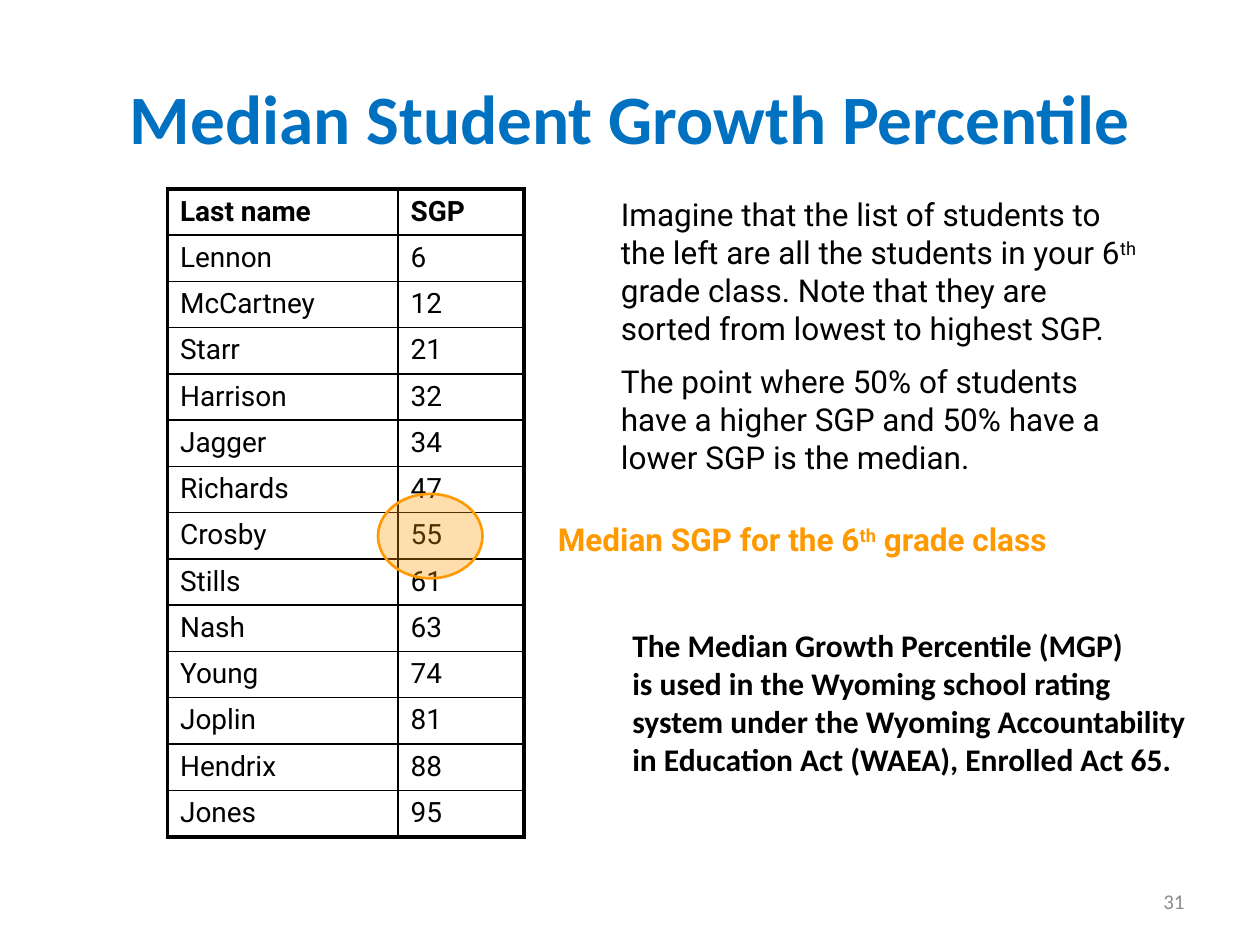
from lxml.etree import SubElement
from pptx import Presentation
from pptx.dml.color import RGBColor
from pptx.enum.shapes import MSO_SHAPE as Shape
from pptx.enum.text import MSO_ANCHOR as Anchor, PP_ALIGN as Align
from pptx.oxml.ns import qn
from pptx.util import Inches, Pt

BLACK, BLUE, ORANGE, GRAY = "000000", "0070C0", "FF9900", "8C8C8C"
THIN, THICK = 1, 2.25

STUDENTS = [
    ("Last name", "SGP"), ("Lennon", "6"), ("McCartney", "12"),
    ("Starr", "21"), ("Harrison", "32"), ("Jagger", "34"),
    ("Richards", "47"), ("Crosby", "55"), ("Stills", "61"),
    ("Nash", "63"), ("Young", "74"), ("Joplin", "81"),
    ("Hendrix", "88"), ("Jones", "95"),
]
ROW_HEIGHTS = [0.34] + [0.32] * 10 + [0.37] * 2 + [0.32]


def color(hex_code):
    return RGBColor.from_string(hex_code)


def write(frame, paragraphs, size=18, font="Roboto", ink=BLACK, bold=False,
          align=Align.LEFT, gap=0):
    """Fill a frame; text between carets, as in 6^th^, is superscript."""
    for index, text in enumerate(paragraphs):
        para = frame.add_paragraph() if index else frame.paragraphs[0]
        para.alignment = align
        if index and gap:
            para.space_before = Pt(gap)
        for number, part in enumerate(text.split("^")):
            span = para.add_run()
            span.text = part
            span.font.size = Pt(size)
            span.font.name = font
            span.font.bold = bold
            span.font.color.rgb = color(ink)
            if number % 2:
                span._r.get_or_add_rPr().set("baseline", "30000")


def draw_borders(cell, **widths):
    """Give each named side (L, R, T, B) a black line of that width."""
    properties = cell._tc.get_or_add_tcPr()
    for position, (side, width) in enumerate(widths.items()):
        line = SubElement(properties, qn(f"a:ln{side}"), w=str(Pt(width)))
        fill = SubElement(line, qn("a:solidFill"))
        SubElement(fill, qn("a:srgbClr"), val=BLACK)
        properties.insert(position, line)


class SlideBuilder:
    def __init__(self, page):
        self.page = page

    def text(self, left, top, width, height, *paragraphs, wrap=True,
             anchor=Anchor.TOP, **style):
        box = self.page.shapes.add_textbox(
            Inches(left), Inches(top), Inches(width), Inches(height))
        box.text_frame.word_wrap = wrap
        box.text_frame.vertical_anchor = anchor
        write(box.text_frame, paragraphs, **style)

    def table(self, left, top, widths, heights, rows):
        table = self.page.shapes.add_table(
            len(rows), len(widths), Inches(left), Inches(top),
            Inches(sum(widths)), Inches(sum(heights))).table
        table.first_row = table.horz_banding = False
        for column, width in zip(table.columns, widths):
            column.width = Inches(width)
        last_row, last_column = len(rows) - 1, len(widths) - 1
        for r, values in enumerate(rows):
            table.rows[r].height = Inches(heights[r])
            for c, value in enumerate(values):
                cell = table.cell(r, c)
                cell.fill.background()
                write(cell.text_frame, [value], size=16, bold=r == 0)
                draw_borders(
                    cell,
                    L=THICK if c == 0 else THIN,
                    R=THICK if c == last_column else THIN,
                    T=THICK if r == 0 else THIN,
                    B=THICK if r == last_row else THIN)

    def ellipse(self, left, top, width, height, ink, opacity):
        shape = self.page.shapes.add_shape(
            Shape.OVAL, Inches(left), Inches(top), Inches(width), Inches(height))
        shape.shadow.inherit = False
        shape.fill.solid()
        shape.fill.fore_color.rgb = color(ink)
        tint = shape._element.spPr.find(qn("a:solidFill"))[0]
        SubElement(tint, qn("a:alpha"), val=str(opacity * 1000))
        shape.line.color.rgb = color(ink)
        shape.line.width = Pt(1.5)


def main():
    deck = Presentation()
    deck.slide_width, deck.slide_height = Inches(10), Inches(7.5)
    slide = SlideBuilder(deck.slides.add_slide(deck.slide_layouts[6]))

    slide.text(0.5, 0.3, 9, 1.25, "Median Student Growth Percentile",
               size=39.6, font="Calibri", ink=BLUE, bold=True,
               align=Align.CENTER, anchor=Anchor.MIDDLE)
    slide.table(1.33, 1.5, [1.83, 1], ROW_HEIGHTS, STUDENTS)
    slide.text(4.83, 1.5, 4.33, 2.35,
               "Imagine that the list of students to the left are all the "
               "students in your 6^th^ grade class. Note that they are sorted "
               "from lowest to highest SGP.",
               "The point where 50% of students have a higher SGP and 50% "
               "have a lower SGP is the median.", gap=9)
    slide.text(4.33, 4.08, 4.5, 0.4, "Median SGP for the 6^th^ grade class",
               ink=ORANGE, bold=True)
    slide.ellipse(3, 3.92, 0.83, 0.67, ORANGE, opacity=32)
    slide.text(4.92, 4.92, 4.63, 1.31,
               "The Median Growth Percentile (MGP)",
               "is used in the Wyoming school rating",
               "system under the Wyoming Accountability",
               "in Education Act (WAEA), Enrolled Act 65.",
               font="Calibri", bold=True, wrap=False)
    slide.text(7.17, 6.95, 2.33, 0.4, "31", size=12, font="Calibri",
               ink=GRAY, align=Align.RIGHT, anchor=Anchor.MIDDLE)

    deck.save("out.pptx")


if __name__ == "__main__":
    main()
